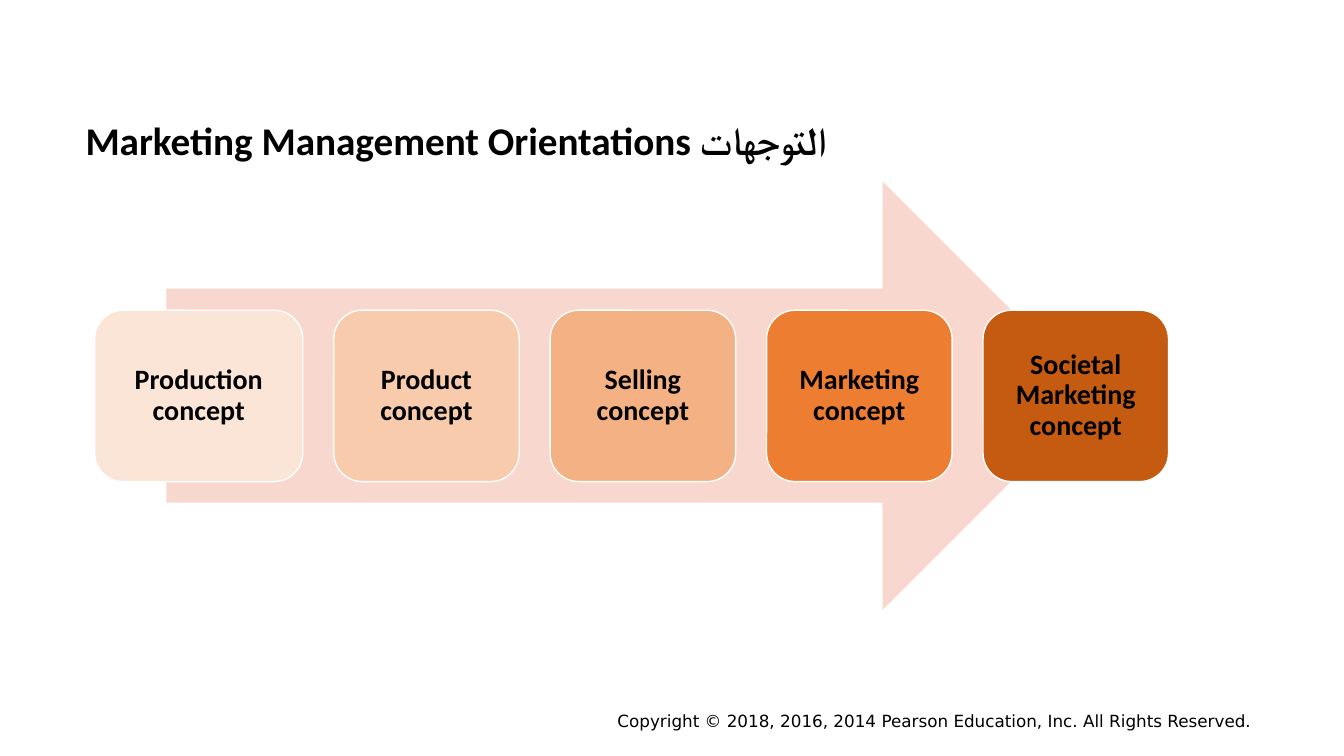
from pptx import Presentation
from pptx.dml.color import RGBColor
from pptx.enum.shapes import MSO_SHAPE
from pptx.enum.text import MSO_ANCHOR, PP_ALIGN
from pptx.util import Pt

ARROW, CARD = MSO_SHAPE.RIGHT_ARROW, MSO_SHAPE.ROUNDED_RECTANGLE
TOP, MIDDLE = MSO_ANCHOR.TOP, MSO_ANCHOR.MIDDLE
LEFT, CENTER, RIGHT = PP_ALIGN.LEFT, PP_ALIGN.CENTER, PP_ALIGN.RIGHT

CONCEPTS = [
    ("Production concept", "FBE5D6", 148.6),
    ("Product concept", "F8CBAD", 132.5),
    ("Selling concept", "F4B183", 132.5),
    ("Marketing concept", "ED7D31", 132.5),
    ("Societal Marketing concept", "C55A11", 132.5),
]
CARD_LEFT, CARD_TOP, CARD_HEIGHT, CARD_GAP = 67.7, 221.6, 122.4, 22.1


def color(value):
    return RGBColor.from_string(value)


class SlideBuilder:
    def __init__(self, s, font="Calibri", ink="000000"):
        self.s, self.font, self.ink = s, font, ink

    def fill_text(self, sp, text, align, anchor, spacing=0.9, inset=None, **fmt):
        """Put one formatted paragraph into a shape; fmt holds font attributes."""
        tf = sp.text_frame
        tf.word_wrap = True
        tf.vertical_anchor = anchor
        if inset is not None:
            for side in ("left", "top", "right", "bottom"):
                setattr(tf, f"margin_{side}", Pt(inset))
        p = tf.paragraphs[0]
        p.alignment, p.line_spacing = align, spacing
        r = p.add_run()
        r.text = text
        for name, value in {"name": self.font, **fmt}.items():
            setattr(r.font, name, value)
        r.font.color.rgb = color(self.ink)

    def text(self, text, box, align, anchor, **style):
        sp = self.s.shapes.add_textbox(*map(Pt, box))
        self.fill_text(sp, text, align, anchor, **style)

    def shape(self, kind, box, fill, line=None):
        sp = self.s.shapes.add_shape(kind, *map(Pt, box))
        sp.shadow.inherit = False
        sp.fill.solid()
        sp.fill.fore_color.rgb = color(fill)
        if line:
            sp.line.color.rgb = color(line)
            sp.line.width = Pt(1)
        else:
            sp.line.fill.background()
        return sp

    def card(self, text, box, fill):
        sp = self.shape(CARD, box, fill, line="FFFFFF")
        self.fill_text(sp, text, CENTER, MIDDLE, inset=6, size=Pt(20), bold=True)


def main():
    prs = Presentation()
    prs.slide_width, prs.slide_height = Pt(960), Pt(540)
    slide = SlideBuilder(prs.slides.add_slide(prs.slide_layouts[6]))

    slide.text(
        "Copyright © 2018, 2016, 2014 Pearson Education, Inc. All Rights Reserved. ",
        (365.8, 504, 539.3, 26.6), RIGHT, TOP,
        spacing=1.0, name="DejaVu Sans", size=Pt(12))
    slide.shape(ARROW, (118.8, 129.6, 664.6, 306), "F8D7CE")

    left = CARD_LEFT
    for text, fill, width in CONCEPTS:
        slide.card(text, (left, CARD_TOP, width, CARD_HEIGHT), fill)
        left += width + CARD_GAP

    slide.text("Marketing Management Orientations التوجهات",
               (54, 73.4, 757.4, 56.9), LEFT, MIDDLE, size=Pt(28), bold=True)
    prs.save("out.pptx")


if __name__ == "__main__":
    main()
